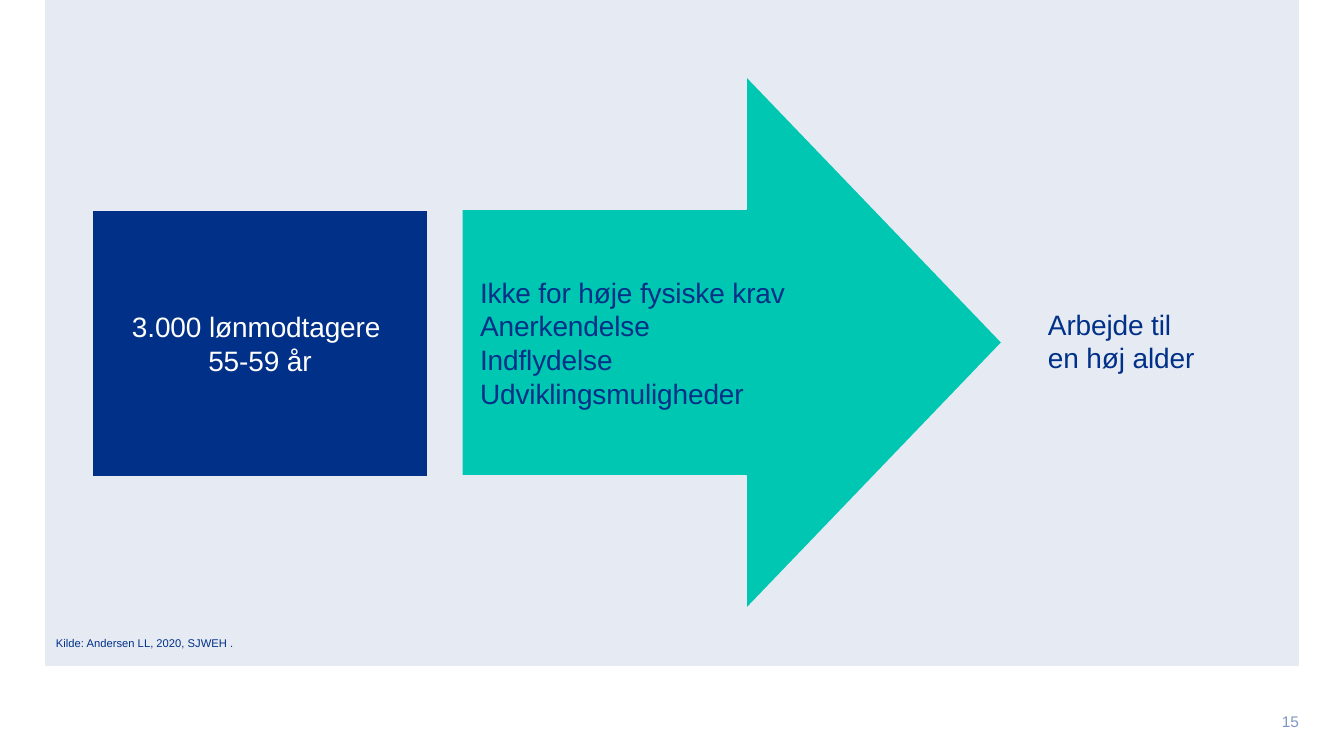
from pptx import Presentation
from pptx.dml.color import RGBColor
from pptx.enum.shapes import MSO_SHAPE as Shape
from pptx.enum.text import MSO_ANCHOR as Anchor, MSO_AUTO_SIZE as AutoSize, PP_ALIGN as Align
from pptx.util import Emu, Pt

NAVY = RGBColor(0x00, 0x30, 0x87)
TEAL = RGBColor(0x00, 0xC7, 0xB1)
PALE = RGBColor(0xE6, 0xEA, 0xF3)
MUTED = RGBColor(0x80, 0x97, 0xC3)
WHITE = RGBColor(0xFF, 0xFF, 0xFF)

GROUP = ["3.000 lønmodtagere ", "55-59 år"]
FACTORS = ["Ikke for høje fysiske krav", "Anerkendelse", "Indflydelse", "Udviklingsmuligheder"]
OUTCOME = ["Arbejde til en høj alder"]
SOURCE = ["Kilde: Andersen LL, 2020, SJWEH ."]
PAGE_NUMBER = ["15"]

PANEL_AT = (45, 0, 1254, 666)
GROUP_AT = (92, 210, 336, 267)
FACTORS_AT = (462, 76, 540, 533)
OUTCOME_AT = (1048, 307, 157, 68)
SOURCE_AT = (56, 636, 319, 17)
PAGE_NUMBER_AT = (1254, 714, 45, 14)
INSET = 18
EMU_PER_PX = 914400 / 100.8


def px(length):
    return Emu(round(length * EMU_PER_PX))


def box(place):
    return [px(length) for length in place]


def write(frame, lines, size=20, color=NAVY, align=Align.LEFT, anchor=Anchor.TOP,
          inset=0, tracking=0, line_spacing=None, space_after=0):
    frame.word_wrap = True
    frame.auto_size = AutoSize.NONE
    frame.vertical_anchor = anchor
    frame.margin_left = frame.margin_right = px(inset)
    frame.margin_top = frame.margin_bottom = px(inset)
    for index, line in enumerate(lines):
        paragraph = frame.add_paragraph() if index else frame.paragraphs[0]
        paragraph.alignment = align
        paragraph.space_before = Pt(0)
        paragraph.space_after = Pt(space_after)
        paragraph.line_spacing = line_spacing or 1.0
        run = paragraph.add_run()
        run.text = line
        run.font.name = "Arial"
        run.font.size = Pt(size)
        run.font.color.rgb = color
        if tracking:
            run._r.get_or_add_rPr().set("spc", str(tracking))


def add_block(slide, kind, place, fill, outlined=True):
    block = slide.shapes.add_shape(kind, *box(place))
    block.shadow.inherit = False
    block.fill.solid()
    block.fill.fore_color.rgb = fill
    if outlined:
        block.line.color.rgb = PALE
        block.line.width = Pt(1)
    else:
        block.line.fill.background()
    return block


def main():
    deck = Presentation()
    deck.slide_width, deck.slide_height = px(1344), px(756)
    slide = deck.slides.add_slide(deck.slide_layouts.get_by_name("Section Header"))
    title = slide.shapes.title
    title.element.getparent().remove(title.element)
    source = slide.placeholders[1]

    panel = add_block(slide, Shape.RECTANGLE, PANEL_AT, PALE, outlined=False)
    source.element.addprevious(panel.element)

    page_number = slide.shapes.add_textbox(*box(PAGE_NUMBER_AT))
    write(page_number.text_frame, PAGE_NUMBER, size=11, color=MUTED,
          align=Align.RIGHT, anchor=Anchor.MIDDLE)

    group = add_block(slide, Shape.RECTANGLE, GROUP_AT, NAVY)
    write(group.text_frame, GROUP, color=WHITE, align=Align.CENTER,
          anchor=Anchor.MIDDLE, inset=INSET, tracking=-10)

    factors = add_block(slide, Shape.RIGHT_ARROW, FACTORS_AT, TEAL)
    factors.adjustments[0] = 0.5
    factors.adjustments[1] = 0.48
    write(factors.text_frame, FACTORS, anchor=Anchor.MIDDLE, inset=INSET, tracking=-10)

    outcome = slide.shapes.add_textbox(*box(OUTCOME_AT))
    write(outcome.text_frame, OUTCOME, tracking=-10)

    source.left, source.top, source.width, source.height = box(SOURCE_AT)
    write(source.text_frame, SOURCE, size=8, line_spacing=1.04, space_after=3)

    deck.save("out.pptx")


if __name__ == "__main__":
    main()
